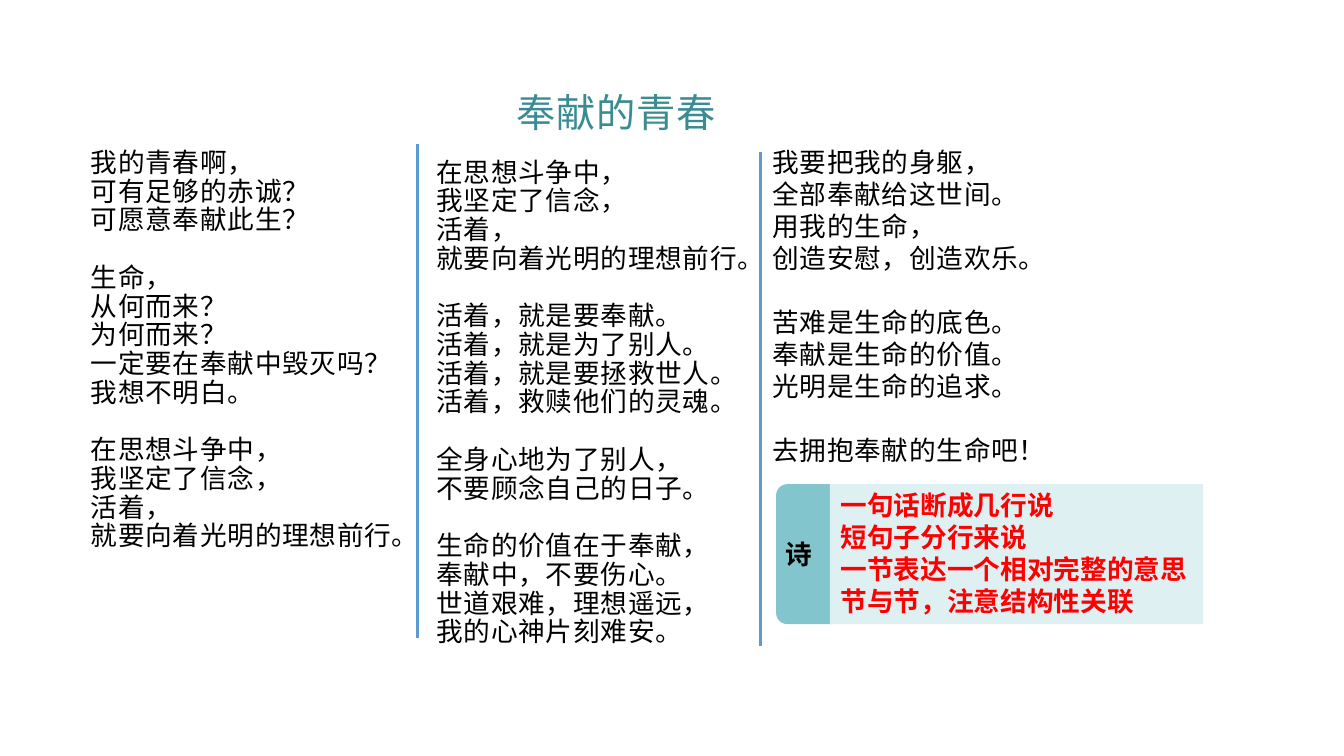
from lxml.etree import SubElement
from pptx import Presentation
from pptx.dml.color import RGBColor
from pptx.enum.shapes import MSO_CONNECTOR, MSO_SHAPE
from pptx.enum.text import MSO_ANCHOR, MSO_AUTO_SIZE, PP_ALIGN
from pptx.oxml.ns import qn
from pptx.util import Cm, Pt

FONT = "Noto Sans CJK SC"
BLACK = RGBColor(0x00, 0x00, 0x00)
RED = RGBColor(0xFF, 0x00, 0x00)
TEAL = RGBColor(0x3A, 0x8B, 0x92)
BLUE = RGBColor(0x5B, 0x9B, 0xD4)
TAB_TEAL = RGBColor(0x83, 0xC5, 0xCD)
PALE_TEAL = RGBColor(0xDF, 0xF0, 0xF3)

TITLE = "奉献的青春"
QUESTIONS = [
    ["我的青春啊，", "可有足够的赤诚？", "可愿意奉献此生？"],
    ["生命，", "从何而来？", "为何而来？", "一定要在奉献中毁灭吗？", "我想不明白。"],
    ["在思想斗争中，", "我坚定了信念，", "活着，", "就要向着光明的理想前行。"],
]
BELIEFS = [
    ["在思想斗争中，", "我坚定了信念，", "活着，", "就要向着光明的理想前行。"],
    ["活着，就是要奉献。", "活着，就是为了别人。",
     "活着，就是要拯救世人。", "活着，救赎他们的灵魂。"],
    ["全身心地为了别人，", "不要顾念自己的日子。"],
    ["生命的价值在于奉献，", "奉献中，不要伤心。",
     "世道艰难，理想遥远，", "我的心神片刻难安。"],
]
PROMISES = [
    ["我要把我的身躯，", "全部奉献给这世间。", "用我的生命，", "创造安慰，创造欢乐。"],
    ["苦难是生命的底色。", "奉献是生命的价值。", "光明是生命的追求。"],
    ["去拥抱奉献的生命吧！"],
]
NOTES = [["一句话断成几行说", "短句子分行来说",
          "一节表达一个相对完整的意思", "节与节，注意结构性关联"]]


def write_stanzas(frame, stanzas, size=18, pitch=21.6, color=BLACK, bold=False,
                  spacing=50, align=PP_ALIGN.LEFT, anchor=MSO_ANCHOR.TOP,
                  insets=(0, 0, 0, 0), wrap=False):
    """Write one paragraph per line, with one line's gap between stanzas.

    spacing is in hundredths of a point; insets are left, top, right, bottom.
    """
    frame.word_wrap = wrap
    frame.auto_size = MSO_AUTO_SIZE.NONE
    frame.vertical_anchor = anchor
    (frame.margin_left, frame.margin_top,
     frame.margin_right, frame.margin_bottom) = insets
    para = frame.paragraphs[0]
    for stanza_index, stanza in enumerate(stanzas):
        for line_index, line in enumerate(stanza):
            if stanza_index or line_index:
                para = frame.add_paragraph()
            starts_stanza = stanza_index and not line_index
            para.alignment = align
            para.line_spacing = Pt(pitch)
            para.space_before = Pt(pitch if starts_stanza else 0)
            para.space_after = Pt(0)
            span = para.add_run()
            span.text = line
            span.font.size = Pt(size)
            span.font.bold = bold
            span.font.color.rgb = color
            span.font.name = FONT
            properties = span.font._element
            properties.set("spc", str(spacing))
            SubElement(properties, qn("a:ea")).set("typeface", FONT)


def place_title(page, left, top, width, height):
    title = page.shapes.title
    title.left, title.top, title.width, title.height = left, top, width, height
    write_stanzas(title.text_frame, [[TITLE]], size=26.5, pitch=32, color=TEAL)


def add_verse_column(page, stanzas, left, top, width, height, pitch):
    box = page.shapes.add_textbox(left, top, width, height)
    write_stanzas(box.text_frame, stanzas, pitch=pitch)


def add_divider(page, left, top, height):
    line = page.shapes.add_connector(
        MSO_CONNECTOR.STRAIGHT, left, top, left, top + height)
    line.line.color.rgb = BLUE
    line.line.width = Pt(2.25)
    SubElement(line._element.spPr, qn("a:effectLst"))


def add_panel(page, kind, left, top, width, height, color):
    panel = page.shapes.add_shape(kind, left, top, width, height)
    panel.shadow.inherit = False
    panel.fill.solid()
    panel.fill.fore_color.rgb = color
    panel.line.fill.background()
    return panel


def add_poetry_notes(page, left, top, width, height):
    """Place a rounded label tab whose right edge lies under the notes."""
    tab_width, notes_offset = Cm(1.55), Cm(1.28)
    overlap = tab_width - notes_offset
    tab = add_panel(page, MSO_SHAPE.ROUNDED_RECTANGLE,
                    left, top, tab_width, height, TAB_TEAL)
    tab.adjustments[0] = 0.17
    write_stanzas(tab.text_frame, [["诗"]], bold=True, spacing=-10,
                  align=PP_ALIGN.CENTER, anchor=MSO_ANCHOR.MIDDLE,
                  insets=(0, 0, overlap + Cm(0.2), 0), wrap=True)
    notes = add_panel(page, MSO_SHAPE.RECTANGLE, left + notes_offset, top,
                      width - notes_offset, height, PALE_TEAL)
    write_stanzas(notes.text_frame, NOTES, color=RED, bold=True, spacing=0,
                  insets=(Cm(0.25), Cm(0.1), 0, 0), wrap=True)


def build_poem_page(deck):
    page = deck.slides.add_slide(deck.slide_layouts[5])
    place_title(page, Cm(12.29), Cm(2.1), Cm(4.83), Cm(1.2))
    add_verse_column(page, QUESTIONS, Cm(2.16), Cm(3.55), Cm(7.7), Cm(9.6), 19.4)
    add_divider(page, Cm(9.94), Cm(3.43), Cm(11.76))
    add_verse_column(page, BELIEFS, Cm(10.39), Cm(3.78), Cm(7.7), Cm(11.7), 19.4)
    add_divider(page, Cm(18.1), Cm(3.63), Cm(11.76))
    add_verse_column(page, PROMISES, Cm(18.39), Cm(3.47), Cm(6.6), Cm(7.7), 21.6)
    add_poetry_notes(page, Cm(18.48), Cm(11.53), Cm(10.17), Cm(3.33))


def main():
    deck = Presentation()
    deck.slide_width, deck.slide_height = Cm(32), Cm(18)
    build_poem_page(deck)
    deck.save("out.pptx")


if __name__ == "__main__":
    main()
